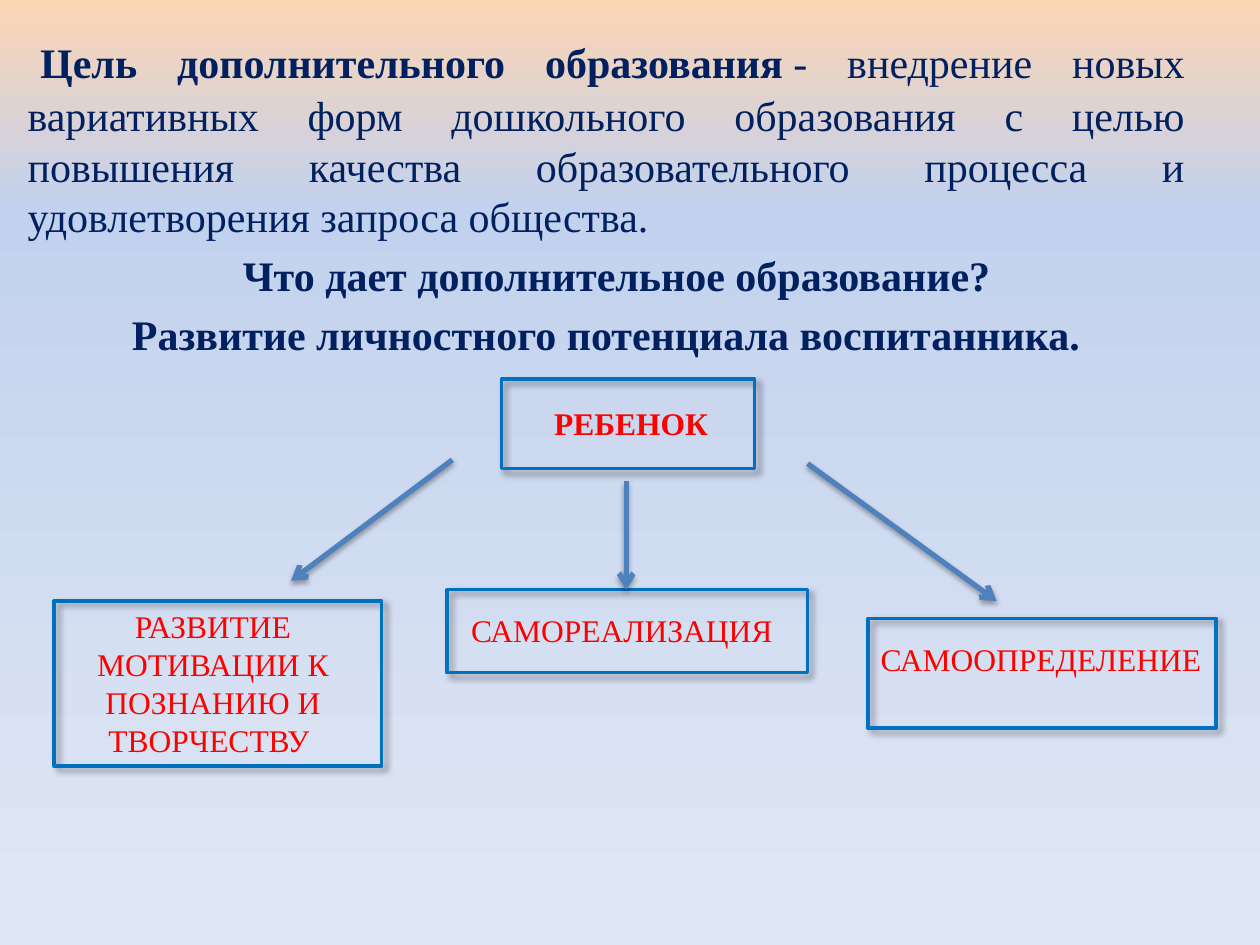
from lxml.etree import SubElement
from pptx import Presentation
from pptx.dml.color import RGBColor
from pptx.enum.shapes import MSO_CONNECTOR, MSO_SHAPE
from pptx.enum.text import PP_ALIGN
from pptx.oxml import parse_xml
from pptx.oxml.ns import nsdecls, qn
from pptx.util import Pt

NAVY = RGBColor(0x00, 0x20, 0x60)
RED = RGBColor(0xFF, 0x00, 0x00)
FRAME_BLUE = RGBColor(0x00, 0x70, 0xC0)
ARROW_BLUE = RGBColor(0x4F, 0x81, 0xBD)
BLACK = RGBColor(0x00, 0x00, 0x00)
BACKGROUND_STOPS = [(0, "FCD5B5"), (22, "C2D1ED"), (100, "E1E8F5")]
SERIF = "Times New Roman"

# Paragraphs: alignment, left margin, runs of (text, bold)
INTRO_AREA = (8.64, 9.36, 675.36, 473.04)
INTRO = [
    (PP_ALIGN.JUSTIFY, 0, [
        ("\u00a0", True),
        ("Цель дополнительного образования\u00a0", True),
        ("- внедрение новых вариативных форм дошкольного образования с целью "
         "повышения качества образовательного процесса и удовлетворения "
         "запроса общества.", False)]),
    (PP_ALIGN.CENTER, 18, [("Что дает дополнительное образование? ", True)]),
    (PP_ALIGN.CENTER, 0, [("Развитие личностного потенциала воспитанника.", True)]),
]

# Label, frame area, label area (left, top, width, height), alignment, bold
BOXES = [
    ("РЕБЕНОК ", (286.56, 216.72, 144.72, 51.12),
     (308.88, 227.52, 108, 28.8), PP_ALIGN.CENTER, True),
    ("РАЗВИТИЕ МОТИВАЦИИ К ПОЗНАНИЮ И ТВОРЧЕСТВУ ", (30.96, 343.44, 187.2, 94.32),
     (30.96, 343.44, 181.44, 94.32), PP_ALIGN.CENTER, False),
    ("САМОРЕАЛИЗАЦИЯ", (255.6, 336.96, 205.92, 47.52),
     (262.08, 345.6, 201.6, 28.8), PP_ALIGN.LEFT, False),
    ("САМООПРЕДЕЛЕНИЕ", (496.08, 353.52, 198.72, 62.64),
     (496.08, 362.16, 198.72, 28.8), PP_ALIGN.LEFT, False),
]

# Arrows from the child to each outcome: x1, y1, x2, y2
ARROWS = [
    (258.48, 262.8, 166.32, 331.92),
    (357.84, 275.04, 357.84, 336.96),
    (461.52, 264.96, 569.52, 343.44),
]


def points(values):
    return [Pt(value) for value in values]


def add_shadow(part, alpha, blur, distance, angle):
    part._element.spPr.append(parse_xml(
        f'<a:effectLst {nsdecls("a")}><a:outerShdw blurRad="{Pt(blur)}" '
        f'dist="{Pt(distance)}" dir="{angle * 60000}" algn="tl" rotWithShape="0">'
        f'<a:srgbClr val="000000"><a:alpha val="{alpha * 1000}"/></a:srgbClr>'
        f'</a:outerShdw></a:effectLst>'))


def style_run(run, size, color, bold, font=SERIF):
    run.font.name = font
    run.font.size = Pt(size)
    run.font.color.rgb = color
    run.font.bold = bold


def add_text_area(slide, area):
    frame = slide.shapes.add_textbox(*points(area)).text_frame
    frame.word_wrap = True
    return frame


def paint_background(slide):
    fill = slide.background.fill
    fill.gradient()
    fill.gradient_angle = 270  # counter-clockwise: top to bottom
    stops = slide.background._cSld.find(".//" + qn("a:gsLst"))
    for stop in list(stops):
        stops.remove(stop)
    for position, color in BACKGROUND_STOPS:
        stop = SubElement(stops, qn("a:gs"), pos=str(position * 1000))
        SubElement(stop, qn("a:srgbClr"), val=color)


def add_intro(slide):
    frame = add_text_area(slide, INTRO_AREA)
    for index, (alignment, margin, runs) in enumerate(INTRO):
        paragraph = frame.add_paragraph() if index else frame.paragraphs[0]
        paragraph.alignment = alignment
        if index:
            paragraph.space_before = Pt(4.8)
        if margin:
            paragraph._p.get_or_add_pPr().set("marL", str(Pt(margin)))
        for text, bold in runs:
            run = paragraph.add_run()
            run.text = text
            style_run(run, 24, NAVY, bold)
    # The taller opening space sets the height of the first line
    opening = frame.paragraphs[0].runs[0]
    style_run(opening, 32, BLACK, True, "Calibri")
    opening.font.italic = True


def add_box(slide, label, frame_area, label_area, alignment, bold):
    frame = slide.shapes.add_shape(MSO_SHAPE.RECTANGLE, *points(frame_area))
    frame.fill.background()
    frame.line.color.rgb = FRAME_BLUE
    frame.line.width = Pt(2)
    add_shadow(frame, 40, 4, 3, 45)
    text_frame = add_text_area(slide, label_area)
    text_frame.text = label
    paragraph = text_frame.paragraphs[0]
    paragraph.alignment = alignment
    style_run(paragraph.runs[0], 18, RED, bold)


def add_arrow(slide, ends):
    arrow = slide.shapes.add_connector(MSO_CONNECTOR.STRAIGHT, *points(ends))
    arrow.line.color.rgb = ARROW_BLUE
    arrow.line.width = Pt(3)
    SubElement(arrow.line._get_or_add_ln(), qn("a:tailEnd"), type="arrow")
    add_shadow(arrow, 35, 3.1, 1.8, 90)


def main():
    deck = Presentation()
    deck.slide_width, deck.slide_height = Pt(720), Pt(540)
    slide = deck.slides.add_slide(deck.slide_layouts[6])
    paint_background(slide)
    add_intro(slide)
    for box in BOXES:
        add_box(slide, *box)
    for ends in ARROWS:
        add_arrow(slide, ends)
    deck.save("out.pptx")


if __name__ == "__main__":
    main()
